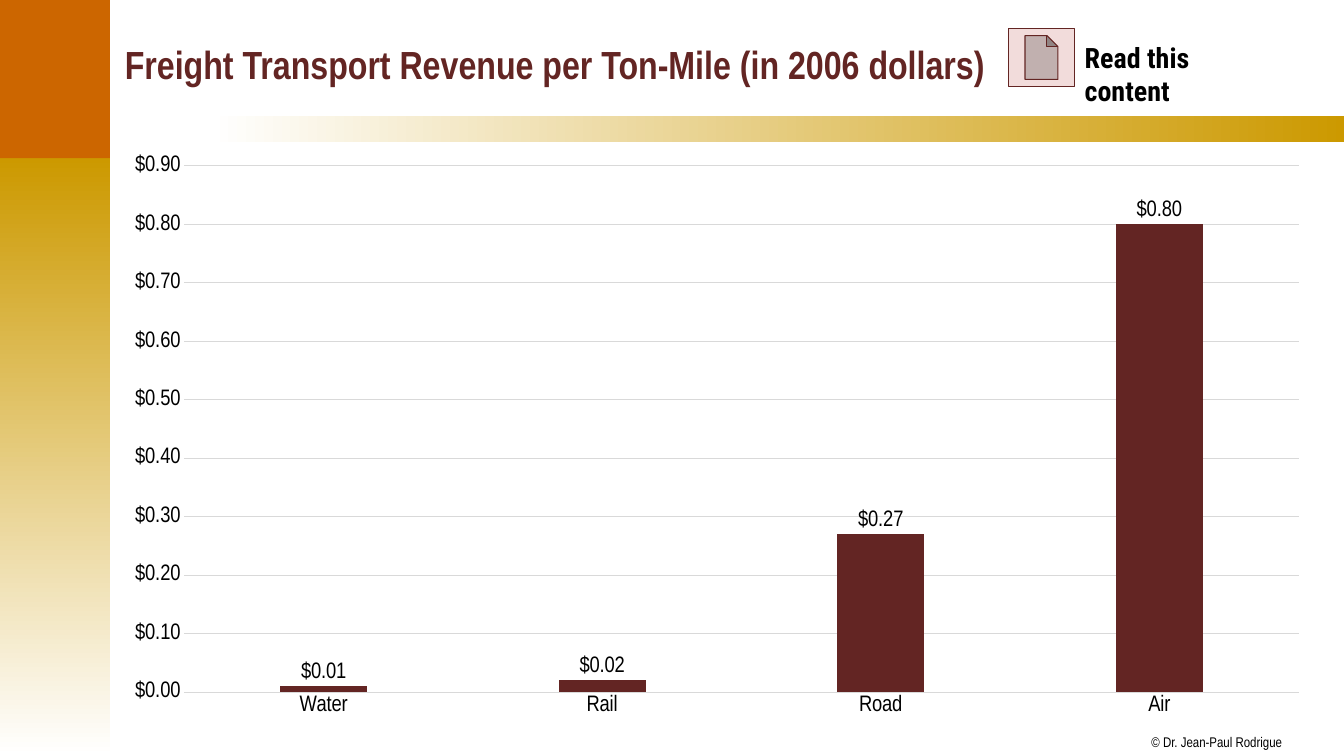
from lxml import etree
from pptx import Presentation
from pptx import util as u
from pptx.chart.data import CategoryChartData
from pptx.dml.color import RGBColor
from pptx.enum import chart as charts, shapes, text

MAROON, GOLD, WHITE, BLACK, GREY = "632523", "CC9900", "FFFFFF", "000000", "D9D9D9"
DOLLARS = '"$"#,##0.00'


def color(value):
    return RGBColor.from_string(value)


def style_font(font, name, size, value, bold=False):
    font.name = name
    font.size = u.Pt(size)
    font.bold = bold
    font.color.rgb = color(value)


presentation = Presentation()
presentation.slide_width = u.Inches(13.33)
presentation.slide_height = u.Inches(7.5)
slide = presentation.slides.add_slide(presentation.slide_layouts[6])

# Side and header bands: place, gradient colours, angle
for place, stops, angle in (
    ((-0.02, 1.57, 1.11, 5.93), (GOLD, WHITE), 270),
    ((2.09, 1.15, 11.25, 0.26), (WHITE, GOLD), 0),
):
    band = slide.shapes.add_shape(shapes.MSO_SHAPE.RECTANGLE, *map(u.Inches, place))
    band.shadow.inherit = False
    band.line.fill.background()
    band.fill.gradient()
    band.fill.gradient_angle = angle
    for stop, value in zip(band.fill.gradient_stops, stops):
        stop.color.rgb = color(value)

# Corner block and document button
for kind, place, fill, line in (
    (shapes.MSO_SHAPE.RECTANGLE, (-0.02, -0.01, 1.11, 1.58), "CC6600", None),
    (shapes.MSO_SHAPE.ACTION_BUTTON_DOCUMENT, (10, 0.28, 0.66, 0.58), "F2DCDB", MAROON),
):
    shape = slide.shapes.add_shape(kind, *map(u.Inches, place))
    shape.shadow.inherit = False
    shape.fill.solid()
    shape.fill.fore_color.rgb = color(fill)
    if line:
        shape.line.color.rgb = color(line)
        shape.line.width = u.Pt(0.75)
    else:
        shape.line.fill.background()

# Revenue chart
data = CategoryChartData(number_format=DOLLARS)
data.categories = ["Water", "Rail", "Road", "Air"]
data.add_series("Series 1", (0.01, 0.02, 0.27, 0.8))
chart = slide.shapes.add_chart(
    charts.XL_CHART_TYPE.COLUMN_CLUSTERED,
    u.Inches(1.1), u.Inches(1.43), u.Inches(12.02), u.Inches(5.79), data,
).chart
chart.has_title = False
chart.has_legend = False
style_font(chart.font, "Arial Narrow", 16, BLACK)

plot = chart.plots[0]
plot.gap_width = 219
plot.overlap = -27
plot.vary_by_categories = False
columns = plot.series[0]
columns.format.fill.solid()
columns.format.fill.fore_color.rgb = color(MAROON)
labels = columns.data_labels
labels.show_value = True
labels.position = charts.XL_LABEL_POSITION.OUTSIDE_END
labels.number_format = DOLLARS
labels.number_format_is_linked = False
style_font(labels.font, "Arial Narrow", 16, BLACK)

# Axes and gridlines
modes, revenue = chart.category_axis, chart.value_axis
for axis in (modes, revenue):
    axis.major_tick_mark = axis.minor_tick_mark = charts.XL_TICK_MARK.NONE
    style_font(axis.tick_labels.font, "Arial Narrow", 16, BLACK)
revenue.minimum_scale, revenue.maximum_scale, revenue.major_unit = 0, 0.9, 0.1
revenue.tick_labels.number_format = DOLLARS
revenue.tick_labels.number_format_is_linked = False
revenue.format.line.fill.background()
for line in (modes.format.line, revenue.major_gridlines.format.line):
    line.color.rgb = color(GREY)
    line.width = u.Pt(0.75)

# Title, button caption and copyright line
for words, place, margins, wrap, anchor, font in (
    ("Freight Transport Revenue per Ton-Mile (in 2006 dollars)", (1.14, 0.11, 11.97, 1.04),
     (0.1, 0.05), True, text.MSO_ANCHOR.MIDDLE, ("Arial Narrow", 28, MAROON, True)),
    ("Read this content", (10.66, 0.35, 1.86, 0.44),
     (0.1, 0.05), True, text.MSO_ANCHOR.TOP, ("Roboto Condensed", 20, BLACK, True)),
    ("© Dr. Jean-Paul Rodrigue", (11.42, 7.28, 1.31, 0.17),
     (0, 0), False, text.MSO_ANCHOR.TOP, ("Arial Narrow", 10, BLACK)),
):
    frame = slide.shapes.add_textbox(*map(u.Inches, place)).text_frame
    frame.margin_left = frame.margin_right = u.Inches(margins[0])
    frame.margin_top = frame.margin_bottom = u.Inches(margins[1])
    frame.word_wrap = wrap
    frame.vertical_anchor = anchor
    paragraph = frame.paragraphs[0]
    paragraph.text = words
    style_font(paragraph.font, *font)

presentation.save("out.pptx")
